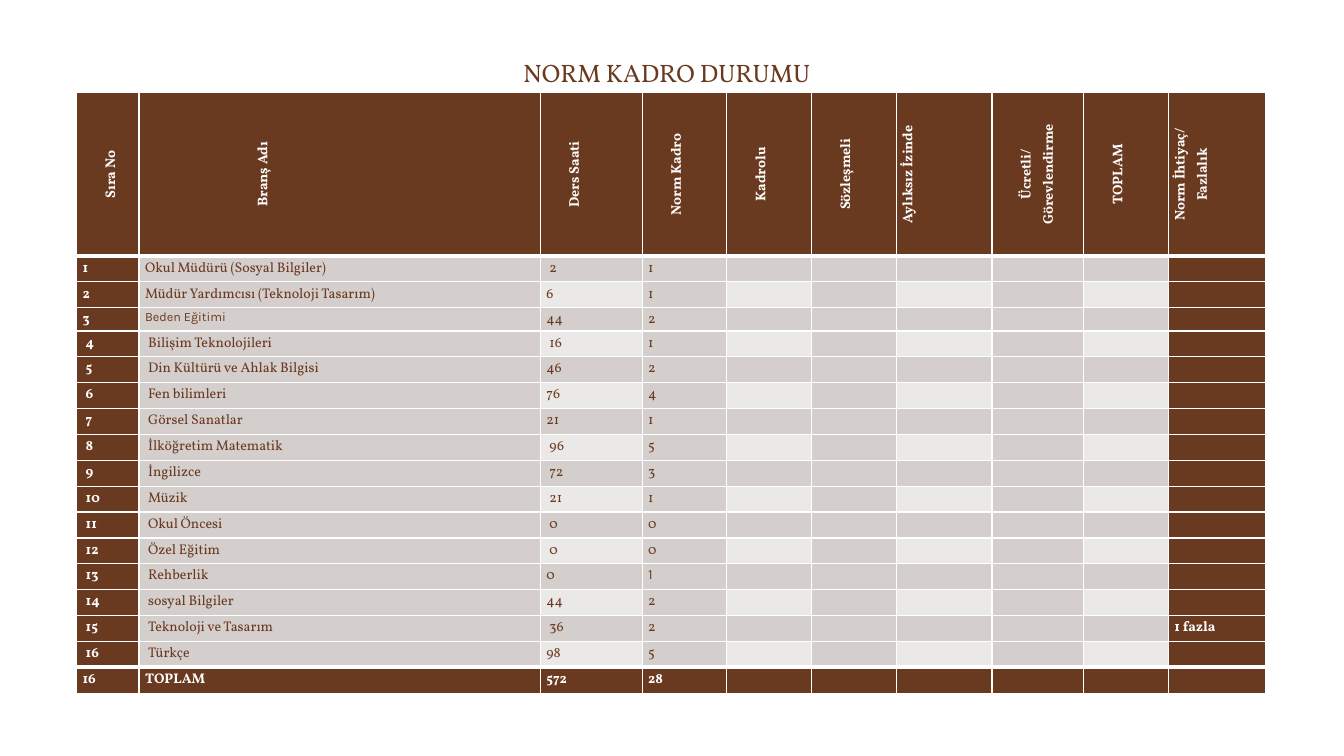
from lxml import etree
from pptx import Presentation
from pptx.dml.color import RGBColor
from pptx.enum.text import MSO_ANCHOR, PP_ALIGN
from pptx.oxml.ns import qn
from pptx.util import Inches, Pt

BROWN = RGBColor(0x6A, 0x3A, 0x20)
WHITE = RGBColor(0xFF, 0xFF, 0xFF)
GREY = RGBColor(0xD4, 0xCE, 0xCD)
PALE = RGBColor(0xEB, 0xE8, 0xE8)
MIDDLE = MSO_ANCHOR.MIDDLE
CENTER = PP_ALIGN.CENTER
SERIF, SANS = "Vollkorn", "Karla"

COLS = [0.62, 3.98, 1.01, 0.84, 0.84, 0.84, 0.95, 0.91, 0.84, 0.96]
HEAD_TALL, ROW_TALL, SLIM_TALL = 1.62, 0.257, 0.23
SLIM = 3
PAD, STEP = 0.06, 0.03
LEAD = 1.15

HEADS = [
    (2, ["Sıra No"]),
    (6, ["Branş Adı"]),
    (2, ["Ders Saati"]),
    (2, ["Norm Kadro"]),
    (2, ["Kadrolu"]),
    (2, ["Sözleşmeli"]),
    (1, ["Aylıksız İzinde"]),
    (2, ["Ücretli/", "Görevlendirme"]),
    (2, ["TOPLAM"]),
    (1, ["Norm İhtiyaç/", "Fazlalık"]),
]
STAFF = [
    ("Okul Müdürü (Sosyal Bilgiler)", 2, 1),
    ("Müdür Yardımcısı (Teknoloji Tasarım)", 6, 1),
    ("Beden Eğitimi", 44, 2),
    ("Bilişim Teknolojileri", 16, 1),
    ("Din Kültürü ve Ahlak Bilgisi", 46, 2),
    ("Fen bilimleri", 76, 4),
    ("Görsel Sanatlar", 21, 1),
    ("İlköğretim Matematik", 96, 5),
    ("İngilizce", 72, 3),
    ("Müzik", 21, 1),
    ("Okul Öncesi", 0, 0),
    ("Özel Eğitim", 0, 0),
    ("Rehberlik", 0, 1),
    ("sosyal Bilgiler", 44, 2),
    ("Teknoloji ve Tasarım", 36, 2),
    ("Türkçe", 98, 5),
]
LAST = len(STAFF) + 1
TOTAL = [str(len(STAFF)), "TOPLAM", "572", "28"]
NOTES = {15: "1 fazla"}
HOURS_IN = {1, 4, 8, 9, 10, 11, 12, 15}
FACES = {(3, 1): (SANS, 9), (13, 3): (SANS, 10)}


def add_run(para, text, color, face=SERIF, size=10, bold=False):
    run = para.add_run()
    run.text = text
    font = run.font
    font.name, font.size, font.bold = face, Pt(size), bold
    font.color.rgb = color


def add_edge(cell, side, width):
    props = cell._tc.get_or_add_tcPr()
    line = etree.SubElement(props, qn(f"a:ln{side}"), w=str(Pt(width)))
    fill = etree.SubElement(line, qn("a:solidFill"))
    etree.SubElement(fill, qn("a:srgbClr"), val=str(WHITE))


def style_cell(cell, row, color):
    top = 3 if row in (1, LAST) else 1
    base = 3 if row in (0, LAST - 1) else 1
    for side, width in (("L", 1), ("R", 1), ("T", top), ("B", base)):
        add_edge(cell, side, width)
    cell.fill.solid()
    cell.fill.fore_color.rgb = color
    cell.margin_left = cell.margin_right = Inches(PAD)
    cell.margin_top = cell.margin_bottom = 0


def fill_head(cell, lines, texts):
    style_cell(cell, 0, BROWN)
    cell.vertical_anchor = MIDDLE
    cell._tc.get_or_add_tcPr().set("vert", "vert270")
    frame = cell.text_frame
    for i, text in enumerate(texts):
        para = frame.add_paragraph() if i else frame.paragraphs[0]
        para.alignment = CENTER
        para.line_spacing = LEAD if i else round(LEAD * lines, 2)
        add_run(para, text, WHITE, bold=True)


def fill_cell(cell, row, col, text):
    dark = row == LAST or col in (0, len(COLS) - 1)
    light = row % 2 == 0 and col % 2 == 0
    style_cell(cell, row, BROWN if dark else PALE if light else GREY)
    if (col < 2 and SLIM < row < LAST) or (col == 2 and row in HOURS_IN):
        cell.margin_left = Inches(PAD + STEP)
    para = cell.text_frame.paragraphs[0]
    para.line_spacing = LEAD
    if text:
        face, size = FACES.get((row, col), (SERIF, 10))
        add_run(para, text, WHITE if dark else BROWN, face, size, dark)
    else:
        end = etree.SubElement(para._p, qn("a:endParaRPr"), sz="1000")
        etree.SubElement(end, qn("a:latin"), typeface=SERIF)


def get_rows():
    blank = [""] * 5
    rows = [
        [str(n), name, str(hours), str(norm)] + blank + [NOTES.get(n, "")]
        for n, (name, hours, norm) in enumerate(STAFF, 1)
    ]
    return rows + [TOTAL + blank + [""]]


def add_grid(slide):
    talls = [HEAD_TALL] + [ROW_TALL] * LAST
    talls[SLIM] = SLIM_TALL
    frame = slide.shapes.add_table(
        len(talls), len(COLS), Inches(0.76), Inches(0.92),
        Inches(sum(COLS)), Inches(sum(talls)))
    table = frame.table
    table.first_row = table.horz_banding = False
    for col, width in zip(table.columns, COLS):
        col.width = Inches(width)
    for row, tall in zip(table.rows, talls):
        row.height = Inches(tall)
    for c, (lines, texts) in enumerate(HEADS):
        fill_head(table.cell(0, c), lines, texts)
    for r, texts in enumerate(get_rows(), 1):
        for c, text in enumerate(texts):
            fill_cell(table.cell(r, c), r, c, text)


def add_title(slide):
    box = slide.shapes.add_textbox(
        Inches(5.09), Inches(0.52), Inches(7.09), Inches(0.4))
    box.text_frame.word_wrap = True
    add_run(box.text_frame.paragraphs[0], "NORM KADRO DURUMU", BROWN, size=18)


def main():
    deck = Presentation()
    deck.slide_width, deck.slide_height = Inches(13.33), Inches(7.5)
    slide = deck.slides.add_slide(deck.slide_layouts[6])
    add_grid(slide)
    add_title(slide)
    deck.save("out.pptx")


if __name__ == "__main__":
    main()
